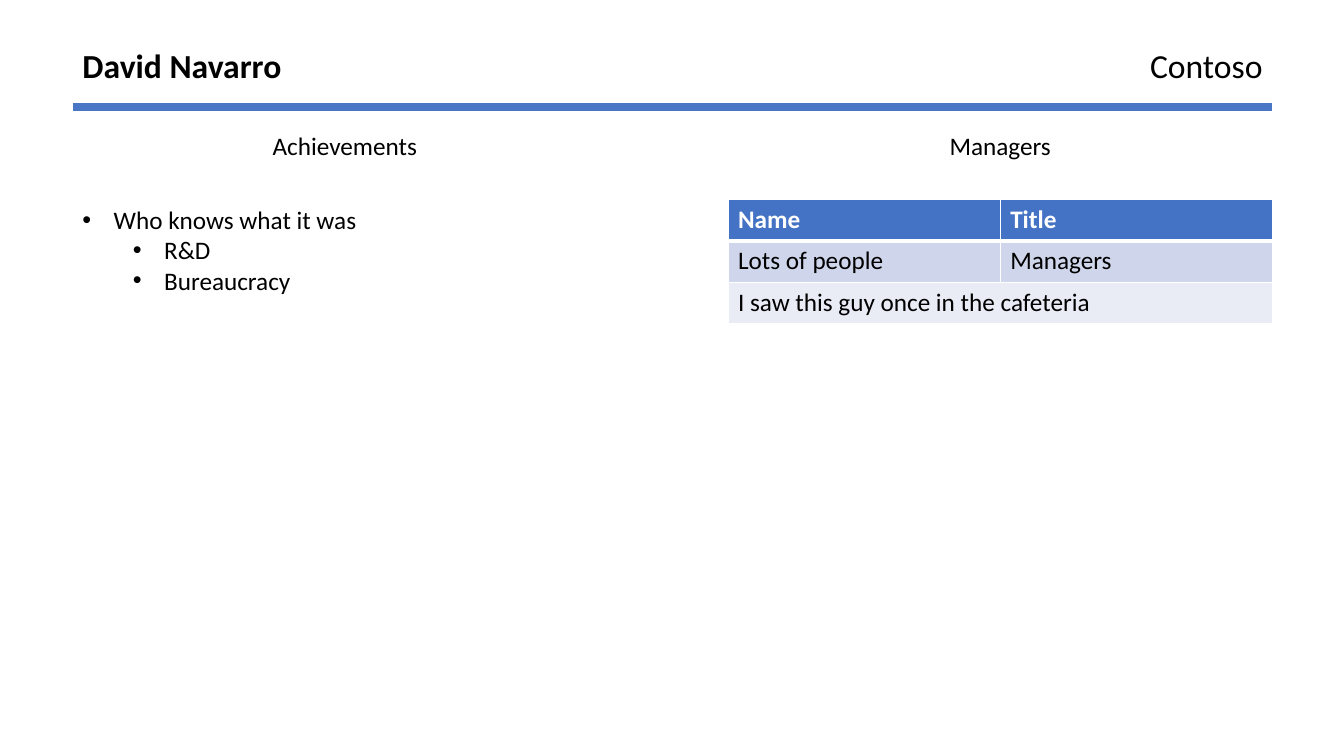
import pptx
import pptx.util
import pptx.dml.color
import pptx.enum.shapes
import pptx.enum.text
import pptx.oxml
import pptx.oxml.ns

Inches = pptx.util.Inches
ALIGN = pptx.enum.text.PP_ALIGN
LEFT, RIGHT, COL_W = 0.72, 7.22, 5.4
TITLE_Y, HEADING_Y, BODY_Y, RULE_Y = 0.4, 1.24, 1.98, 1.06
ROW_H = 0.41
NS = pptx.oxml.ns.nsdecls("a")


def rgb(value):
    return pptx.dml.color.RGBColor.from_string(value)


def add_run(p, text, size, color="000000", bold=False):
    r = p.add_run()
    r.text = text
    values = {"name": "Calibri", "size": pptx.util.Pt(size), "bold": bold}
    for name, value in values.items():
        setattr(r.font, name, value)
    r.font.color.rgb = rgb(color)


def add_box(s, x, y, h):
    tf = s.shapes.add_textbox(Inches(x), Inches(y), Inches(COL_W), Inches(h)).text_frame
    tf.word_wrap = True
    tf.auto_size = pptx.enum.text.MSO_AUTO_SIZE.SHAPE_TO_FIT_TEXT
    return tf


def add_label(s, text, x, y, h, size, align, bold=False):
    p = add_box(s, x, y, h).paragraphs[0]
    p.alignment = align
    add_run(p, text, size, bold=bold)


def add_bullets(s, items, x, y, h):
    tf = add_box(s, x, y, h)
    for i, (level, text) in enumerate(items):
        p = tf.add_paragraph() if i else tf.paragraphs[0]
        p.level = level
        pPr = p._p.get_or_add_pPr()
        pPr.set("marL", str(Inches(0.31 + 0.5 * level)))
        pPr.set("indent", str(Inches(-0.31)))
        pPr.append(pptx.oxml.parse_xml(f'<a:buFont {NS} typeface="Arial"/>'))
        pPr.append(pptx.oxml.parse_xml(f'<a:buChar {NS} char="•"/>'))
        add_run(p, text, 18)


def set_borders(cell, widths):
    tcPr = cell._tc.get_or_add_tcPr()
    for i, (side, width) in enumerate(widths.items()):
        tcPr.insert(i, pptx.oxml.parse_xml(
            f'<a:ln{side} {NS} w="{pptx.util.Pt(width)}"><a:solidFill>'
            f'<a:srgbClr val="FFFFFF"/></a:solidFill></a:ln{side}>'))


def add_managers_table(s, rows, x, y):
    cols = len(rows[0])
    table = s.shapes.add_table(len(rows), cols, Inches(x), Inches(y),
                               Inches(COL_W), Inches(ROW_H * len(rows))).table
    fills = ["4472C4", "CFD5EA", "E9EBF5"]
    for i, texts in enumerate(rows):
        table.rows[i].height = Inches(ROW_H)
        header = i == 0
        for j in range(cols):
            cell = table.cell(i, j)
            cell.fill.solid()
            cell.fill.fore_color.rgb = rgb(fills[i])
            set_borders(cell, {"L": 1, "R": 1, "T": 3 if i == 1 else 1, "B": 3 if header else 1})
        for j, text in enumerate(texts):
            add_run(table.cell(i, j).text_frame.paragraphs[0], text, 18,
                    "FFFFFF" if header else "000000", header)
        if len(texts) < cols:
            table.cell(i, len(texts) - 1).merge(table.cell(i, cols - 1))


def add_rule(s, x1, x2, y):
    line = s.shapes.add_connector(pptx.enum.shapes.MSO_CONNECTOR.STRAIGHT,
                                  Inches(x1), Inches(y), Inches(x2), Inches(y))
    line.line.color.rgb = rgb("4A76C6")
    line.line.width = pptx.util.Pt(6)
    line._element.spPr.append(pptx.oxml.parse_xml(f"<a:effectLst {NS}/>"))


def main():
    prs = pptx.Presentation()
    prs.slide_width, prs.slide_height = Inches(13.33), Inches(7.5)
    s = prs.slides.add_slide(prs.slide_layouts[6])
    add_managers_table(s, [["Name", "Title"], ["Lots of people", "Managers"],
                           ["I saw this guy once in the cafeteria"]], RIGHT, BODY_Y)
    add_label(s, "David Navarro", LEFT, TITLE_Y, 0.5, 24, ALIGN.LEFT, bold=True)
    add_bullets(s, [(0, "Who knows what it was"), (1, "R&D"), (1, "Bureaucracy")],
                LEFT, BODY_Y, 1.01)
    add_label(s, "Contoso", RIGHT, TITLE_Y, 0.5, 24, ALIGN.RIGHT)
    for text, x in [("Achievements", LEFT), ("Managers", RIGHT)]:
        add_label(s, text, x, HEADING_Y, 0.4, 18, ALIGN.CENTER)
    add_rule(s, LEFT, RIGHT + COL_W, RULE_Y)
    prs.save("out.pptx")


if __name__ == "__main__":
    main()
